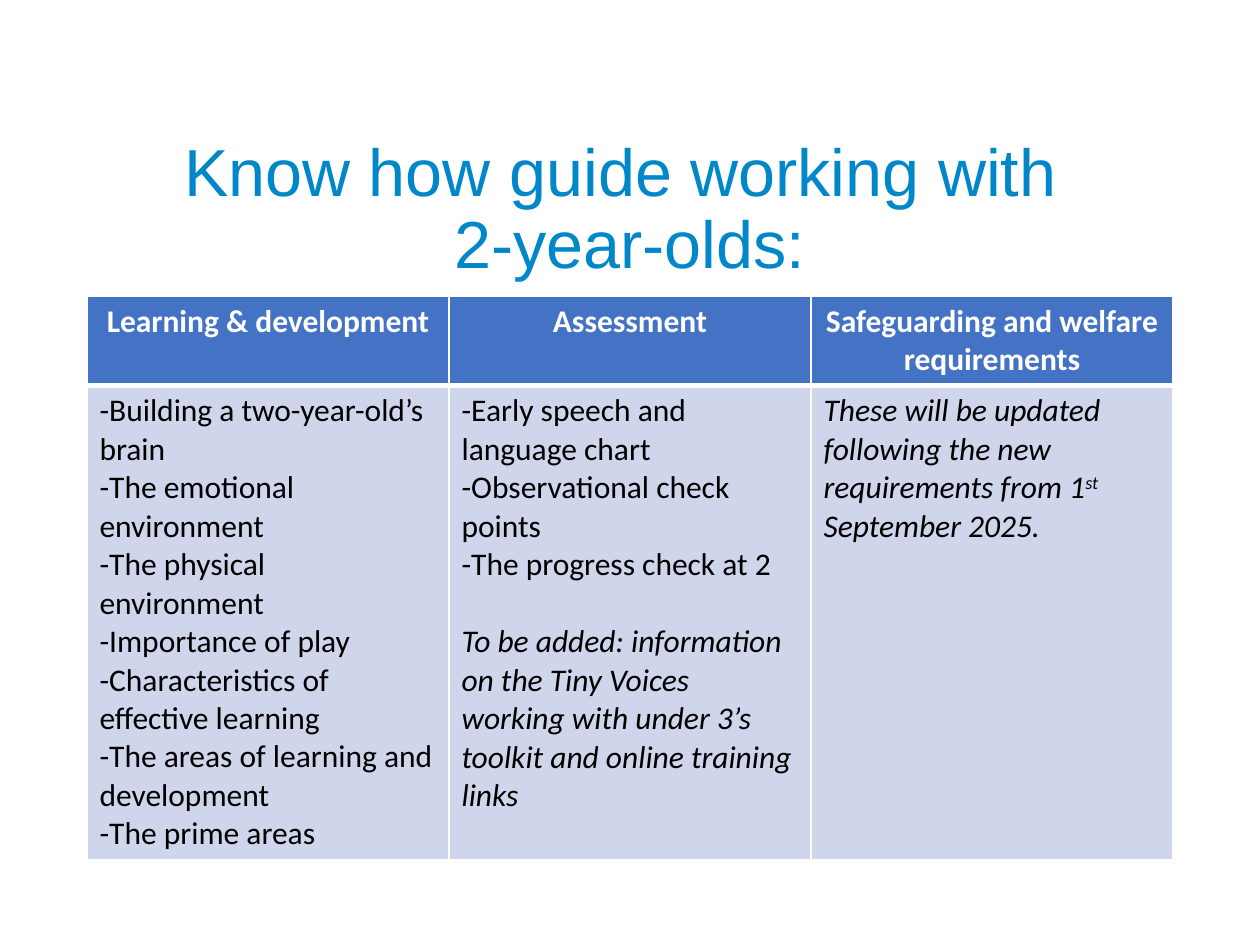
import pptx
import pptx.dml.color
import pptx.enum.text
import pptx.oxml
import pptx.oxml.ns
import pptx.util

Pt = pptx.util.Pt
ALIGN = pptx.enum.text.PP_ALIGN
COLORS = {"title": "0087CA", "header": "4472C4", "body": "CFD5EA", "white": "FFFFFF", "black": "000000"}
TITLE = "Know how guide working with \v2-year-olds:"
COLUMNS = [
    {
        "heading": "Learning & development",
        "items": [
            "-Building a two-year-old’s brain",
            "-The emotional environment",
            "-The physical environment",
            "-Importance of play",
            "-Characteristics of effective learning",
            "-The areas of learning and development",
            "-The prime areas",
        ],
    },
    {
        "heading": "Assessment",
        "items": [
            "-Early speech and language chart",
            "-Observational check points",
            "-The progress check at 2",
        ],
        "note": ["To be added: information on the Tiny Voices working with under 3’s toolkit and online training links"],
    },
    {
        "heading": "Safeguarding and welfare requirements",
        "items": [],
        "note": ["These will be updated following the new requirements from 1", "st", " September 2025."],
    },
]
LEFT, WIDTH = 49.68, 620.64
TABLE_TOP, ROW_HEIGHTS = 169.2, (50.4, 266.4)
NOTE_GAP = 22


def rgb(name):
    """Return the named colour."""
    return pptx.dml.color.RGBColor.from_string(COLORS[name])


def write(para, text, font="Calibri", size=18, color="black", bold=False, italic=False,
          align=ALIGN.LEFT, raised=False):
    """Append formatted text to a paragraph."""
    para.alignment = align
    for index, line in enumerate(text.split("\v")):
        if index:
            para.add_line_break()
        span = para.add_run()
        span.text = line
        span.font.name, span.font.size = font, Pt(size)
        span.font.bold, span.font.italic = bold, italic
        span.font.color.rgb = rgb(color)
        if raised:
            span.font._element.set("baseline", "30000")


def style_cell(cell, fill, top, bottom):
    """Give a cell its white borders and its fill."""
    properties = cell._tc.get_or_add_tcPr()
    for side, width in (("L", 1), ("R", 1), ("T", top), ("B", bottom)):
        properties.append(pptx.oxml.parse_xml(
            f'<a:ln{side} {pptx.oxml.ns.nsdecls("a")} w="{Pt(width)}"><a:solidFill>'
            f'<a:srgbClr val="{COLORS["white"]}"/></a:solidFill></a:ln{side}>'))
    cell.fill.solid()
    cell.fill.fore_color.rgb = rgb(fill)


def fill_body(frame, column):
    """Write the items of a column and then its note."""
    blocks = [([item], False) for item in column["items"]]
    if "note" in column:
        blocks.append((column["note"], True))
    for index, (parts, is_note) in enumerate(blocks):
        para = frame.add_paragraph() if index else frame.paragraphs[0]
        if index and is_note:
            para.space_before = Pt(NOTE_GAP)
        for part in parts:
            write(para, part, italic=is_note, raised=part == "st")


def main():
    """Build the slide and save it."""
    deck = pptx.Presentation()
    deck.slide_width, deck.slide_height = Pt(720), Pt(540)
    page = deck.slides.add_slide(deck.slide_layouts[5])

    title = page.shapes.title
    title.left, title.top, title.width, title.height = Pt(LEFT), Pt(95.76), Pt(WIDTH), Pt(49.68)
    frame = title.text_frame
    frame.word_wrap = True
    frame.auto_size = pptx.enum.text.MSO_AUTO_SIZE.NONE
    frame.vertical_anchor = pptx.enum.text.MSO_ANCHOR.MIDDLE
    frame.paragraphs[0].line_spacing = 0.9
    write(frame.paragraphs[0], TITLE, font="Arial", size=38, color="title", align=ALIGN.CENTER)

    table = page.shapes.add_table(2, len(COLUMNS), Pt(LEFT), Pt(TABLE_TOP),
                                  Pt(WIDTH), Pt(sum(ROW_HEIGHTS))).table
    table.horz_banding = False
    for row, height in zip(table.rows, ROW_HEIGHTS):
        row.height = Pt(height)
    for index, column in enumerate(COLUMNS):
        table.columns[index].width = Pt(WIDTH / len(COLUMNS))
        header, body = table.cell(0, index), table.cell(1, index)
        style_cell(header, "header", 1, 3)
        style_cell(body, "body", 3, 1)
        write(header.text_frame.paragraphs[0], column["heading"], color="white", bold=True, align=ALIGN.CENTER)
        fill_body(body.text_frame, column)

    deck.save("out.pptx")


if __name__ == "__main__":
    main()
